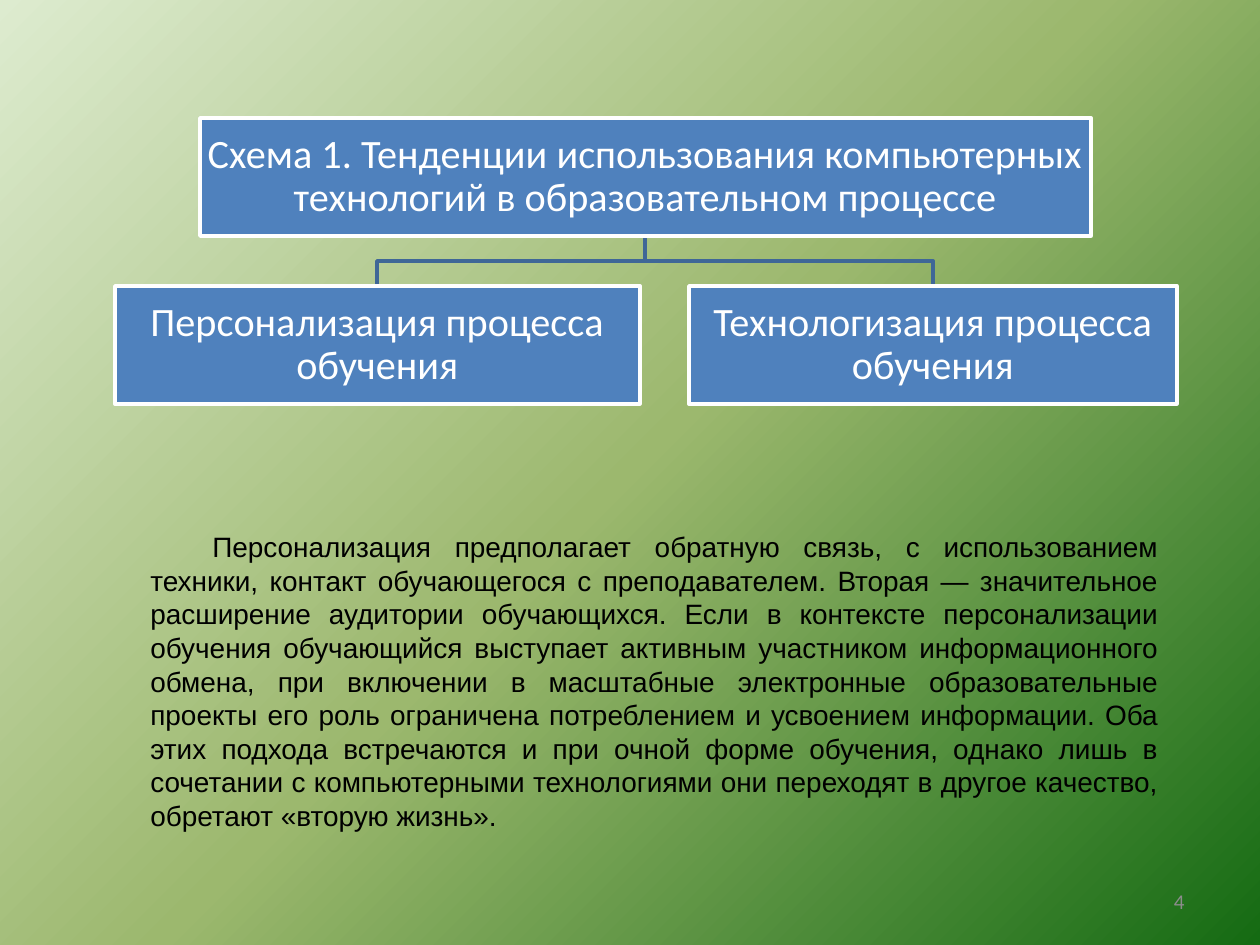
from copy import deepcopy
from dataclasses import dataclass

from pptx import Presentation
from pptx import util as u
from pptx.dml.color import RGBColor
from pptx.enum import shapes, text

EMU_PER_PX = 914400 / 126
BACKGROUND_STOPS = [(0, "DDEBCF"), (0.5, "9CB86E"), (1, "156B13")]
EXPLANATION = (
    "Персонализация предполагает обратную связь, с использованием техники, "
    "контакт обучающегося с преподавателем. Вторая — значительное расширение "
    "аудитории обучающихся. Если в контексте персонализации обучения обучающийся "
    "выступает активным участником информационного обмена, при включении в "
    "масштабные электронные образовательные проекты его роль ограничена "
    "потреблением и усвоением информации. Оба этих подхода встречаются и при "
    "очной форме обучения, однако лишь в сочетании с компьютерными технологиями "
    "они переходят в другое качество, обретают «вторую жизнь»."
)


@dataclass(frozen=True)
class Node:
    label: str
    left: int
    top: int
    width: int
    height: int = 118

    @property
    def middle(self) -> int:
        return self.left + self.width // 2

    @property
    def bottom(self) -> int:
        return self.top + self.height


ROOT = Node("Схема 1. Тенденции использования компьютерных "
            "технологий в образовательном процессе", 200, 118, 891)
BRANCHES = [
    Node("Персонализация процесса обучения", 115, 286, 525),
    Node("Технологизация процесса обучения", 689, 286, 488),
]


def px(length: int) -> u.Emu:
    return u.Emu(round(length * EMU_PER_PX))


def color(value: str) -> RGBColor:
    return RGBColor.from_string(value)


def paint_background(page) -> None:
    fill = page.background.fill
    fill.gradient()
    fill.gradient_angle = 315
    # The default gradient has two stops; a third is cloned from the last.
    last = page.background._cSld.xpath(".//a:gs")[-1]
    last.addnext(deepcopy(last))
    for stop, (position, value) in zip(fill.gradient_stops, BACKGROUND_STOPS):
        stop.position = position
        stop.color.rgb = color(value)


def write(shape, words: str, font: str, size: int, value: str, align):
    """Put one middle-anchored paragraph in the shape and return it."""
    frame = shape.text_frame
    frame.word_wrap = True
    frame.vertical_anchor = text.MSO_ANCHOR.MIDDLE
    para = frame.paragraphs[0]
    para.text = words
    para.alignment = align
    para.font.name = font
    para.font.size = u.Pt(size)
    para.font.color.rgb = color(value)
    return para


def draw_link(page, parent: Node, child: Node) -> None:
    bend = (parent.bottom + child.top) // 2
    builder = page.shapes.build_freeform(parent.middle, parent.bottom, EMU_PER_PX)
    builder.add_line_segments(
        [(parent.middle, bend), (child.middle, bend), (child.middle, child.top)],
        close=False,
    )
    link = builder.convert_to_shape()
    link.shadow.inherit = False
    link.fill.background()
    link.line.color.rgb = color("3F6797")
    link.line.width = u.Pt(2)


def draw_node(page, node: Node) -> None:
    box = page.shapes.add_shape(
        shapes.MSO_SHAPE.RECTANGLE,
        px(node.left), px(node.top), px(node.width), px(node.height))
    box.shadow.inherit = False
    box.fill.solid()
    box.fill.fore_color.rgb = color("4F81BD")
    box.line.color.rgb = color("FFFFFF")
    box.line.width = u.Pt(2)
    frame = box.text_frame
    frame.margin_left = frame.margin_right = px(2)
    frame.margin_top = frame.margin_bottom = px(2)
    para = write(box, node.label, "Calibri", 23, "FFFFFF", text.PP_ALIGN.CENTER)
    para.line_spacing = 0.9


def main() -> None:
    deck = Presentation()
    deck.slide_width, deck.slide_height = px(1260), px(945)
    page = deck.slides.add_slide(deck.slide_layouts[6])
    paint_background(page)

    for branch in BRANCHES:
        draw_link(page, ROOT, branch)
    for node in [ROOT, *BRANCHES]:
        draw_node(page, node)

    number = page.shapes.add_textbox(px(903), px(876), px(294), px(50))
    write(number, "4", "Calibri", 12, "8C8C8C", text.PP_ALIGN.RIGHT)

    explanation = page.shapes.add_textbox(px(138), px(522), px(1033), px(318))
    para = write(explanation, EXPLANATION, "Arial", 16, "000000",
                 text.PP_ALIGN.JUSTIFY)
    para._p.get_or_add_pPr().set("indent", str(px(62)))

    deck.save("out.pptx")


if __name__ == "__main__":
    main()
